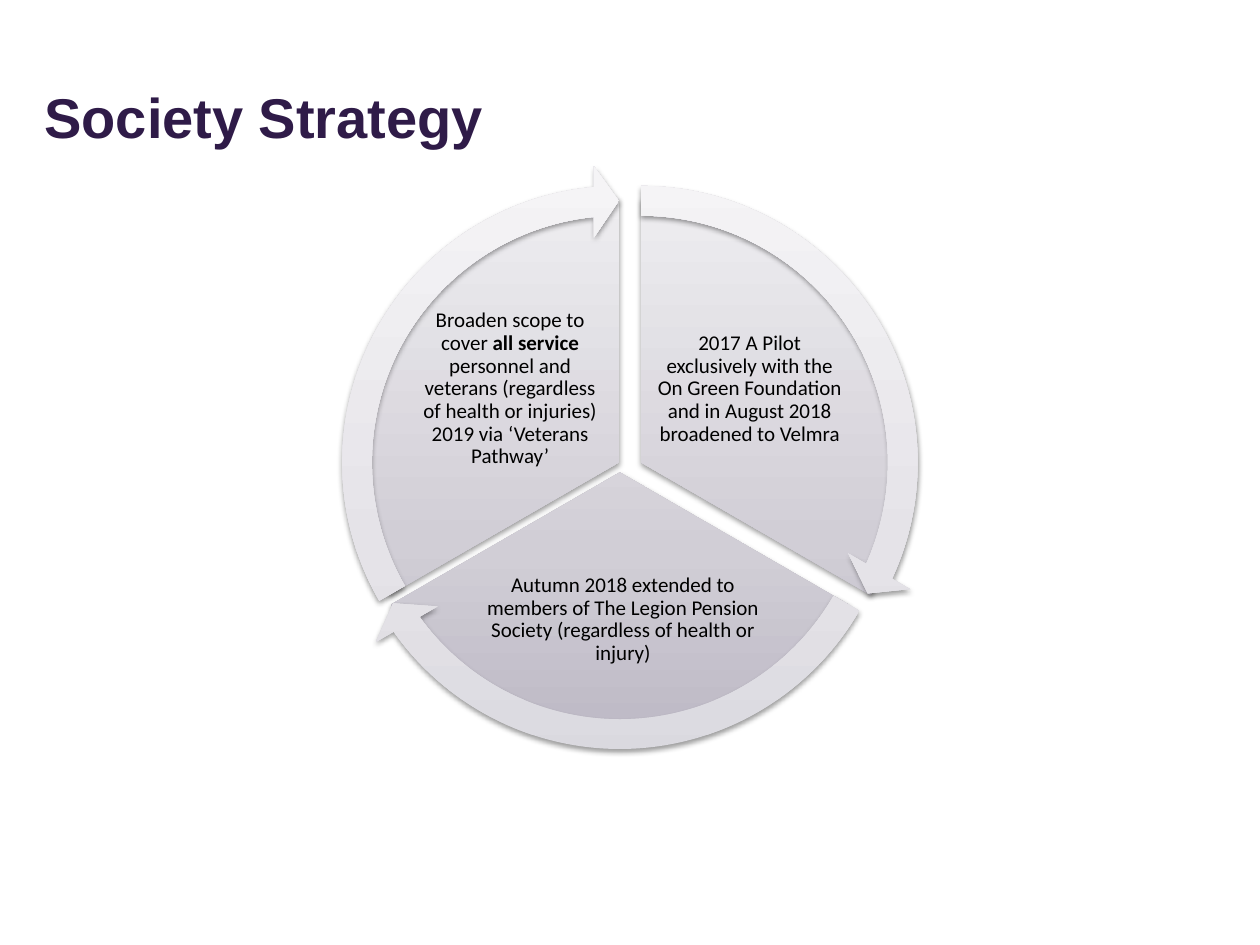
"""Build the Society Strategy slide: a three-part cycle with arrows."""
from lxml import etree
from pptx import Presentation
from pptx import util as u
from pptx.dml.color import RGBColor
from pptx.enum import shapes, text
from pptx.oxml.ns import qn

PURPLE = RGBColor(0x2F, 0x1B, 0x48)
BLACK = RGBColor(0, 0, 0)
SECTOR_STOPS = [
    (0, RGBColor(0xBD, 0xB9, 0xC5)),
    (35, RGBColor(0xD1, 0xCE, 0xD6)),
    (100, RGBColor(0xEE, 0xED, 0xF0)),
]
ARROW_STOPS = [
    (0, RGBColor(0xDA, 0xD9, 0xDF)),
    (35, RGBColor(0xE5, 0xE3, 0xE8)),
    (100, RGBColor(0xF5, 0xF4, 0xF6)),
]

TITLE = "Society Strategy"
STAGES = [
    {
        "runs": [("2017 A Pilot exclusively with the On Green Foundation and in "
                  "August 2018 broadened to Velmra", False)],
        "corner": (7.59, 3.99),
        "sector": (162, 18),
        "arrow": (147.25, 161.99),
        "label": (13.21, 6.25, 3.81, 3.18),
    },
    {
        "runs": [("Autumn 2018 extended to members of The Legion Pension Society "
                  "(regardless of health or injury)", False)],
        "corner": (7.16, 4.19),
        "sector": (18, 90),
        "arrow": (86.72, 18),
        "label": (9.7, 11.1, 5.72, 2.79),
    },
    {
        "runs": [("Broaden scope to cover ", False), ("all service ", True),
                 ("personnel and veterans (regardless of health or injuries) "
                  "2019 via ‘Veterans Pathway’", False)],
        "corner": (7.14, 3.99),
        "sector": (90, 162),
        "arrow": (158.73, 90),
        "label": (8.38, 6.25, 3.81, 3.18),
    },
]
STAGES[0]["arrow"] = (14.73, 161.99)
SECTOR_SIZE = 10.67
ARROW_SIZE = 11.99
ARROW_SHAFT, ARROW_HEAD_ANGLE, ARROW_HEAD = 0.05, 3.28, 0.06


def write_text(shape, runs, *, size, font, color, align, margin=None, spacing=None):
    frame = shape.text_frame
    frame.word_wrap = True
    frame.auto_size = text.MSO_AUTO_SIZE.NONE
    frame.vertical_anchor = text.MSO_ANCHOR.MIDDLE
    if margin is not None:
        frame.margin_left = frame.margin_right = u.Cm(margin)
        frame.margin_top = frame.margin_bottom = u.Cm(margin)
    paragraph = frame.paragraphs[0]
    paragraph.alignment = align
    if spacing is not None:
        paragraph.line_spacing = spacing
    for content, bold in runs:
        run = paragraph.add_run()
        run.text = content
        run.font.size = u.Pt(size)
        run.font.name = font
        run.font.bold = bold
        run.font.color.rgb = color


def add_color(parent, color, alpha=None):
    element = etree.SubElement(parent, qn("a:srgbClr"), val=str(color))
    if alpha is not None:
        etree.SubElement(element, qn("a:alpha"), val=str(alpha * 1000))


def style_shape(shape, stops):
    shape.line.fill.background()
    shape.fill.gradient()
    properties = shape._element.spPr
    gradient = properties.find(qn("a:gradFill"))
    for child in list(gradient):
        gradient.remove(child)
    stop_list = etree.SubElement(gradient, qn("a:gsLst"))
    for position, color in stops:
        add_color(etree.SubElement(stop_list, qn("a:gs"), pos=str(position * 1000)), color)
    etree.SubElement(gradient, qn("a:lin"), ang=str(270 * 60000), scaled="0")
    shape.shadow.inherit = False
    shadow = etree.SubElement(
        properties.find(qn("a:effectLst")), qn("a:outerShdw"),
        blurRad=str(u.Pt(3.1)), dist=str(u.Pt(1.6)), dir=str(90 * 60000), rotWithShape="0")
    add_color(shadow, BLACK, 38)


def add_ring_part(group, kind, corner, size, adjustments, stops):
    left, top = corner
    shape = group.shapes.add_shape(kind, u.Cm(left), u.Cm(top), u.Cm(size), u.Cm(size))
    for index, value in enumerate(adjustments):
        shape.adjustments[index] = value
    style_shape(shape, stops)


def main():
    presentation = Presentation()
    presentation.slide_width, presentation.slide_height = u.Cm(25.4), u.Cm(19.05)
    slide = presentation.slides.add_slide(presentation.slide_layouts[5])
    title = slide.shapes.title
    title.left, title.top = u.Cm(0.64), u.Cm(0.76)
    title.width, title.height = u.Cm(17.73), u.Cm(3.18)
    write_text(title, [(TITLE, True)], size=32, font="Arial", color=PURPLE,
               align=text.PP_ALIGN.LEFT)

    cycle = slide.shapes.add_group_shape()
    for stage in STAGES:
        add_ring_part(cycle, shapes.MSO_SHAPE.PIE, stage["corner"], SECTOR_SIZE,
                      stage["sector"], SECTOR_STOPS)
        label = cycle.shapes.add_textbox(*map(u.Cm, stage["label"]))
        write_text(label, stage["runs"], size=12, font="Calibri", color=BLACK,
                   align=text.PP_ALIGN.CENTER, margin=0.04, spacing=0.9)
    overhang = (ARROW_SIZE - SECTOR_SIZE) / 2
    for stage in STAGES:
        corner = [edge - overhang for edge in stage["corner"]]
        adjustments = (ARROW_SHAFT, ARROW_HEAD_ANGLE, *stage["arrow"], ARROW_HEAD)
        add_ring_part(cycle, shapes.MSO_SHAPE.CIRCULAR_ARROW, corner, ARROW_SIZE,
                      adjustments, ARROW_STOPS)
    presentation.save("out.pptx")


if __name__ == "__main__":
    main()
